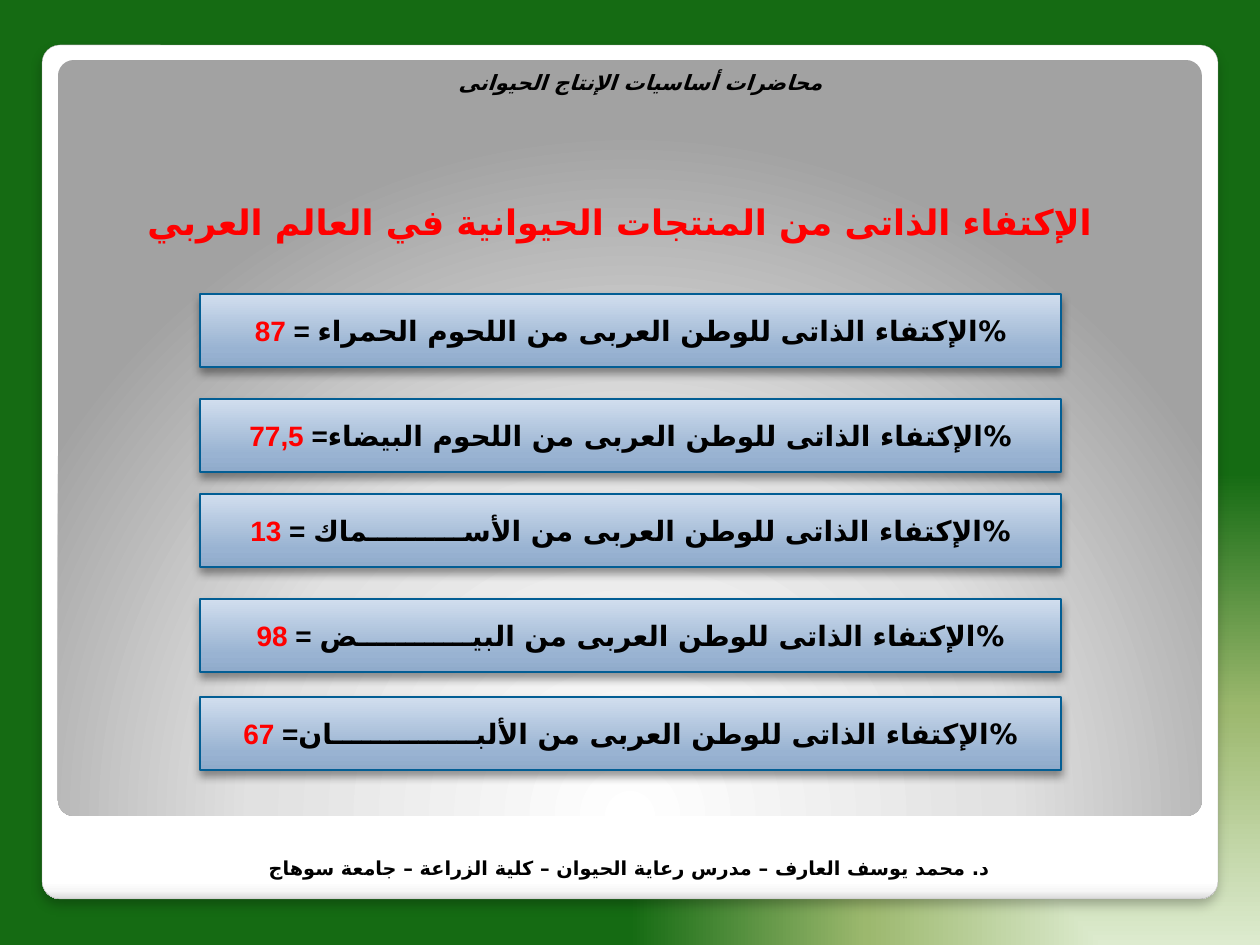
from pptx import Presentation
from pptx.dml.color import RGBColor
from pptx.enum.shapes import MSO_SHAPE
from pptx.enum.text import MSO_ANCHOR, PP_ALIGN
from pptx.oxml import parse_xml
from pptx.oxml.ns import nsdecls, qn
from pptx.util import Pt

SCALE = 914400 / 126
BLACK, RED = "000000", "FF0000"
ARABIC, DIGITS = "DejaVu Sans", "Arial"

HEADER = "محاضرات أساسيات الإنتاج الحيوانى"
TITLE = "الإكتفاء الذاتى من المنتجات الحيوانية في العالم العربي"
FOOTER = "د. محمد يوسف العارف – مدرس رعاية الحيوان – كلية الزراعة – جامعة سوهاج"
BAR_PREFIX = "الإكتفاء الذاتى للوطن العربى من "
BARS = [
    (294, "اللحوم الحمراء", " = ", "87"),
    (399, "اللحوم البيضاء", "= ", "77,5"),
    (494, "الأســــــــــماك", " = ", "13"),
    (599, "البيــــــــــــض", " = ", "98"),
    (697, "الألبـــــــــــــــان", "= ", "67"),
]

BACKGROUND = dict(stops=[(0, "DDEBCF"), (50, "9CB86E"), (100, "156B13")],
                  path="rect", to=(100, 100, 0, 0))
FRAME = dict(stops=[(0, "FFFFFF"), (98, "FFFFFF"), (99, "F7F7F7"), (100, "DADADA")], angle=90)
PANEL = dict(stops=[(0, "FFFFFF"), (55, "E1E1E1"), (100, "A2A2A2")],
             path="circle", to=(50, 175, 50, -75))
BAR = dict(stops=[(0, "90ABCB"), (25, "99B3D2"), (100, "D1DEEE")], angle=270)


def px(*values):
    return [round(v * SCALE) for v in values]


def rgb(color):
    return RGBColor.from_string(color)


def set_gradient(fill, root, stops, angle=0, path=None, to=None):
    fill.gradient()
    gs = "".join(f'<a:gs pos="{pos * 1000}"><a:srgbClr val="{color}"/></a:gs>'
                 for pos, color in stops)
    if path:
        sides = " ".join(f'{side}="{v * 1000}"' for side, v in zip("ltrb", to))
        shade = f'<a:path path="{path}"><a:fillToRect {sides}/></a:path>'
    else:
        shade = f'<a:lin ang="{angle * 60000}" scaled="0"/>'
    old = root.find(".//" + qn("a:gradFill"))
    new = parse_xml(f'<a:gradFill {nsdecls("a")} rotWithShape="1">'
                    f'<a:gsLst>{gs}</a:gsLst>{shade}</a:gradFill>')
    old.getparent().replace(old, new)


def set_shadow(sp, alpha, blur, dist):
    effects = sp._element.spPr.find(qn("a:effectLst"))
    effects.append(parse_xml(
        f'<a:outerShdw {nsdecls("a")} blurRad="{Pt(blur)}" dist="{Pt(dist)}" dir="5400000" '
        f'algn="ctr" rotWithShape="0"><a:srgbClr val="000000">'
        f'<a:alpha val="{alpha * 1000}"/></a:srgbClr></a:outerShdw>'))


def add_box(s, kind, box, gradient, line=None, shadow=None, radius=None):
    sp = s.shapes.add_shape(kind, *px(*box))
    sp.shadow.inherit = False
    set_gradient(sp.fill, sp._element, **gradient)
    if radius:
        sp.adjustments[0] = radius
    if line:
        sp.line.color.rgb = rgb(line[0])
        sp.line.width = Pt(line[1])
    else:
        sp.line.fill.background()
    if shadow:
        set_shadow(sp, *shadow)
    return sp


def add_run(p, text, color, cs=ARABIC, **font):
    r = p.add_run()
    r.text = text
    for name, value in font.items():
        setattr(r.font, name, value)
    r.font.color.rgb = rgb(color)
    r._r.get_or_add_rPr().append(parse_xml(f'<a:cs {nsdecls("a")} typeface="{cs}"/>'))


def format_paragraph(p, **attrs):
    p.alignment = PP_ALIGN.CENTER
    p.space_before = Pt(2.5)
    for name, value in attrs.items():
        p._p.get_or_add_pPr().set(name, value)


def add_caption(s, box, text, **font):
    tf = s.shapes.add_textbox(*px(*box)).text_frame
    tf.word_wrap = True
    p = tf.paragraphs[0]
    format_paragraph(p, marL="265176", indent="-265176")
    add_run(p, text, BLACK, bold=True, **font)


def fill_title(s):
    sp = s.shapes.title
    sp.left, sp.top, sp.width, sp.height = px(94, 158, 1040, 640)
    s.shapes._spTree.append(sp._element)
    tf = sp.text_frame
    margins = dict(zip(("margin_left", "margin_top", "margin_right", "margin_bottom"),
                       px(25, 13, 13, 6)))
    for name, value in dict(margins, vertical_anchor=MSO_ANCHOR.TOP, word_wrap=True).items():
        setattr(tf, name, value)
    p = tf.paragraphs[0]
    p.line_spacing = 1.7
    format_paragraph(p, marL="265176", indent="-265176", rtl="1")
    add_run(p, TITLE, RED, size=Pt(20), bold=True, name="Times New Roman")


def add_bar(s, top, product, equals, value):
    sp = add_box(s, MSO_SHAPE.RECTANGLE, (200, top, 861, 73), BAR,
                 line=("035E94", 0.75), shadow=(40, 5.2, 3))
    sp.text_frame.vertical_anchor = MSO_ANCHOR.MIDDLE
    p = sp.text_frame.paragraphs[0]
    p.alignment = PP_ALIGN.CENTER
    for text, color, cs in ((BAR_PREFIX + product, BLACK, ARABIC), (equals, BLACK, DIGITS),
                            (value, RED, DIGITS), ("%", BLACK, ARABIC)):
        add_run(p, text, color, cs, size=Pt(16), bold=True, name="DejaVu Sans")


def main():
    prs = Presentation()
    prs.slide_width, prs.slide_height = px(1260, 945)
    s = prs.slides.add_slide(prs.slide_layouts[5])
    set_gradient(s.background.fill, s._element, **BACKGROUND)
    add_box(s, MSO_SHAPE.ROUNDED_RECTANGLE, (42, 45, 1176, 854), FRAME,
            line=("A4A4A4", 0.16), shadow=(25, 6, 4), radius=0.021)
    add_box(s, MSO_SHAPE.ROUNDED_RECTANGLE, (58, 60, 1144, 756), PANEL, radius=0.021)
    fill_title(s)
    for bar in BARS:
        add_bar(s, *bar)
    add_caption(s, (105, 63, 1071, 63), HEADER,
                size=Pt(12), italic=True, name="TeX Gyre Pagella")
    add_caption(s, (94, 850, 1071, 63), FOOTER, size=Pt(11), name="DejaVu Sans")
    prs.save("out.pptx")


if __name__ == "__main__":
    main()
